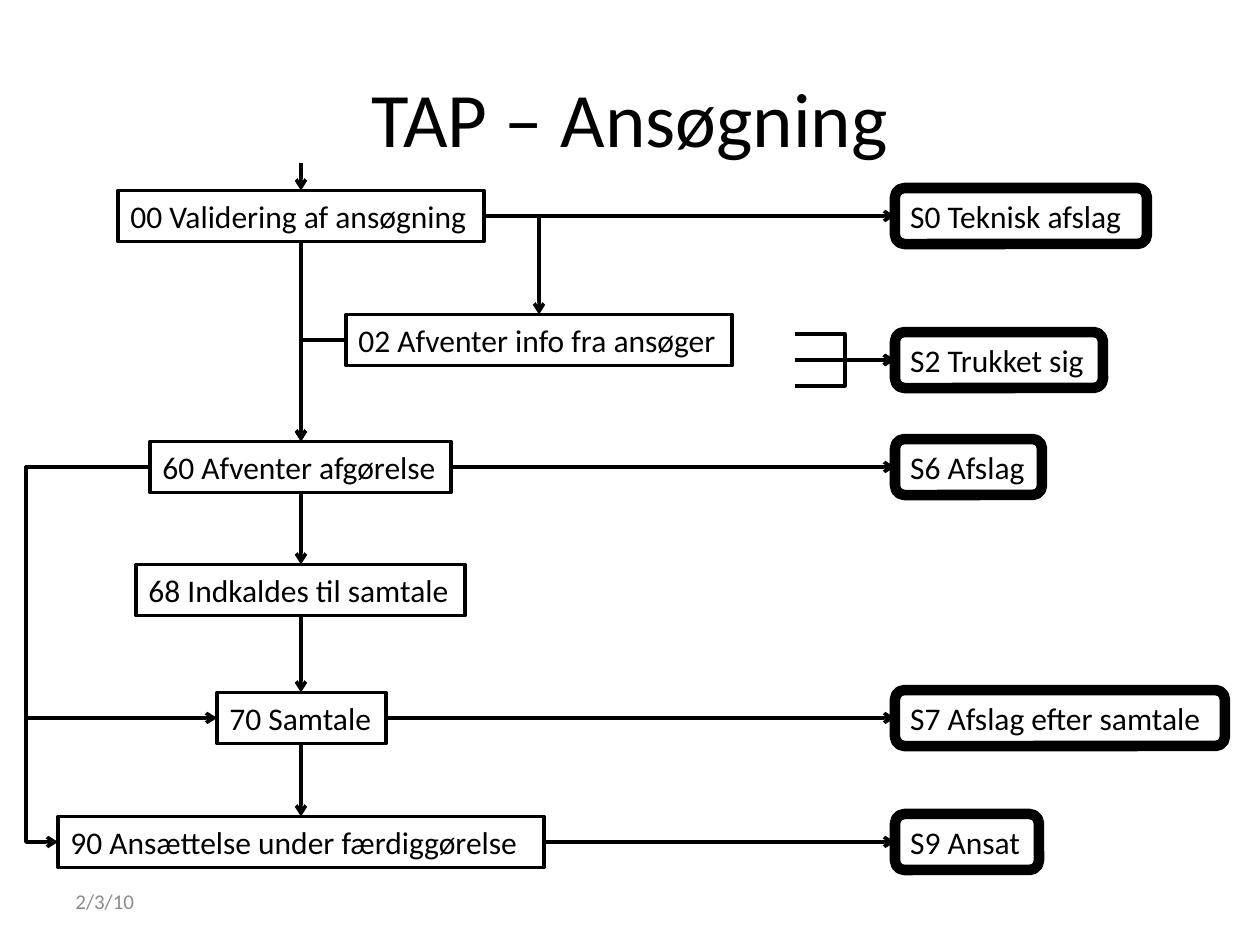
"""Build the TAP application flowchart slide."""
from lxml import etree
from pptx import Presentation
from pptx import util as u
from pptx.dml.color import RGBColor
from pptx.enum import shapes, text
from pptx.oxml import ns

PX = 914400 / 126
BLACK = RGBColor(0x00, 0x00, 0x00)
GREY = RGBColor(0x8C, 0x8C, 0x8C)
FONT = "Calibri"

AXIS = 301
STEP_HEIGHT = 51
STATUS_LEFT = 895
STATUS_HEIGHT = 56
WITHDRAWN_ROW = 360
BYPASS_X = 26

STEPS = {
    "00 Validering af ansøgning": (118, 216, 366),
    "02 Afventer info fra ansøger": (346, 340, 386),
    "60 Afventer afgørelse": (150, 467, 301),
    "68 Indkaldes til samtale": (136, 590, 329),
    "70 Samtale": (217, 718, 169),
    "90 Ansættelse under færdiggørelse": (58, 842, 486),
}
STATUSES = {
    "S0 Teknisk afslag": (216, 252),
    "S2 Trukket sig": (WITHDRAWN_ROW, 208),
    "S6 Afslag": (467, 147),
    "S7 Afslag efter samtale": (718, 330),
    "S9 Ansat": (842, 144),
}


def px(*lengths):
    """Turn pixel lengths into EMU."""
    return [u.Emu(round(length * PX)) for length in lengths]


def write(frame, words, size, color, align=text.PP_ALIGN.LEFT, wrap=True):
    """Put one formatted, vertically centred paragraph into a frame."""
    frame.text = words
    frame.word_wrap = wrap
    frame.vertical_anchor = text.MSO_ANCHOR.MIDDLE
    para = frame.paragraphs[0]
    para.alignment = align
    font = para.runs[0].font
    font.name, font.size, font.color.rgb = FONT, u.Pt(size), color


def add_label(page, bounds, words, size, color, align):
    """Add a plain text box."""
    box = page.shapes.add_textbox(*px(*bounds))
    write(box.text_frame, words, size, color, align)


def add_node(page, kind, left, row, width, height, weight, words, wrap):
    """Add an outlined box centred vertically on its row."""
    box = page.shapes.add_shape(kind, *px(left, row - height / 2, width, height))
    box.shadow.inherit = False
    box.fill.background()
    box.line.color.rgb = BLACK
    box.line.width = u.Pt(weight)
    write(box.text_frame, words, 18, BLACK, wrap=wrap)


def add_arrow(page, start, end, kind=shapes.MSO_CONNECTOR.STRAIGHT):
    """Add a black connector with an open arrowhead at its end."""
    arrow = page.shapes.add_connector(kind, *px(*start, *end))
    arrow.line.color.rgb = BLACK
    arrow.line.width = u.Pt(2)
    line = arrow.line._get_or_add_ln()
    etree.SubElement(line, ns.qn("a:tailEnd"), type="arrow")
    etree.SubElement(arrow._element.spPr, ns.qn("a:effectLst"))
    return arrow


def add_elbow(page, start, end, turn):
    """Add a bent arrow that leaves sideways and turns at the given x."""
    arrow = add_arrow(page, start, end, shapes.MSO_CONNECTOR.ELBOW)
    geometry = arrow._element.spPr.find(ns.qn("a:prstGeom"))
    if turn == end[0]:
        geometry.set("prst", "bentConnector2")
        return
    share = round(100000 * (turn - start[0]) / (end[0] - start[0]))
    guides = geometry.find(ns.qn("a:avLst"))
    etree.SubElement(guides, ns.qn("a:gd"), name="adj1", fmla=f"val {share}")


def add_flow(page):
    """Connect the steps and statuses."""
    half = STEP_HEIGHT / 2
    first, waiting, decision, invited, interview, hiring = STEPS.values()
    spine = [first, decision, invited, interview, hiring]
    add_arrow(page, (AXIS, 163), (AXIS, first[1] - half))
    for (_, above, _), (_, below, _) in zip(spine, spine[1:]):
        add_arrow(page, (AXIS, above + half), (AXIS, below - half))
    for left, row, width in (first, decision, interview, hiring):
        add_arrow(page, (left + width, row), (STATUS_LEFT, row))
    for left, row, _ in (interview, hiring):
        add_elbow(page, decision[:2], (left, row), BYPASS_X)
    waiting_x = waiting[0] + waiting[2] / 2
    add_elbow(page, (first[0] + first[2], first[1]),
              (waiting_x, waiting[1] - half), waiting_x)
    add_elbow(page, waiting[:2], (AXIS, decision[1] - half), AXIS)
    goal = (STATUS_LEFT, WITHDRAWN_ROW)
    add_arrow(page, (795, WITHDRAWN_ROW), goal)
    for offset in (-26, 26):
        add_elbow(page, (795, WITHDRAWN_ROW + offset), goal, 845)


def main():
    """Create the deck and save it."""
    deck = Presentation()
    deck.slide_width, deck.slide_height = px(1260, 945)
    page = deck.slides.add_slide(deck.slide_layouts[6])
    add_label(page, (63, 38, 1134, 157), "TAP – Ansøgning", 44, BLACK,
              text.PP_ALIGN.CENTER)
    add_label(page, (63, 876, 294, 50), "2/3/10", 12, GREY, text.PP_ALIGN.LEFT)
    for words, (left, row, width) in STEPS.items():
        add_node(page, shapes.MSO_SHAPE.FLOWCHART_PROCESS, left, row, width,
                 STEP_HEIGHT, 2, words, wrap=words.startswith("90"))
    for words, (row, width) in STATUSES.items():
        add_node(page, shapes.MSO_SHAPE.FLOWCHART_ALTERNATE_PROCESS, STATUS_LEFT,
                 row, width, STATUS_HEIGHT, 6, words, wrap=True)
    add_flow(page)
    deck.save("out.pptx")


if __name__ == "__main__":
    main()
